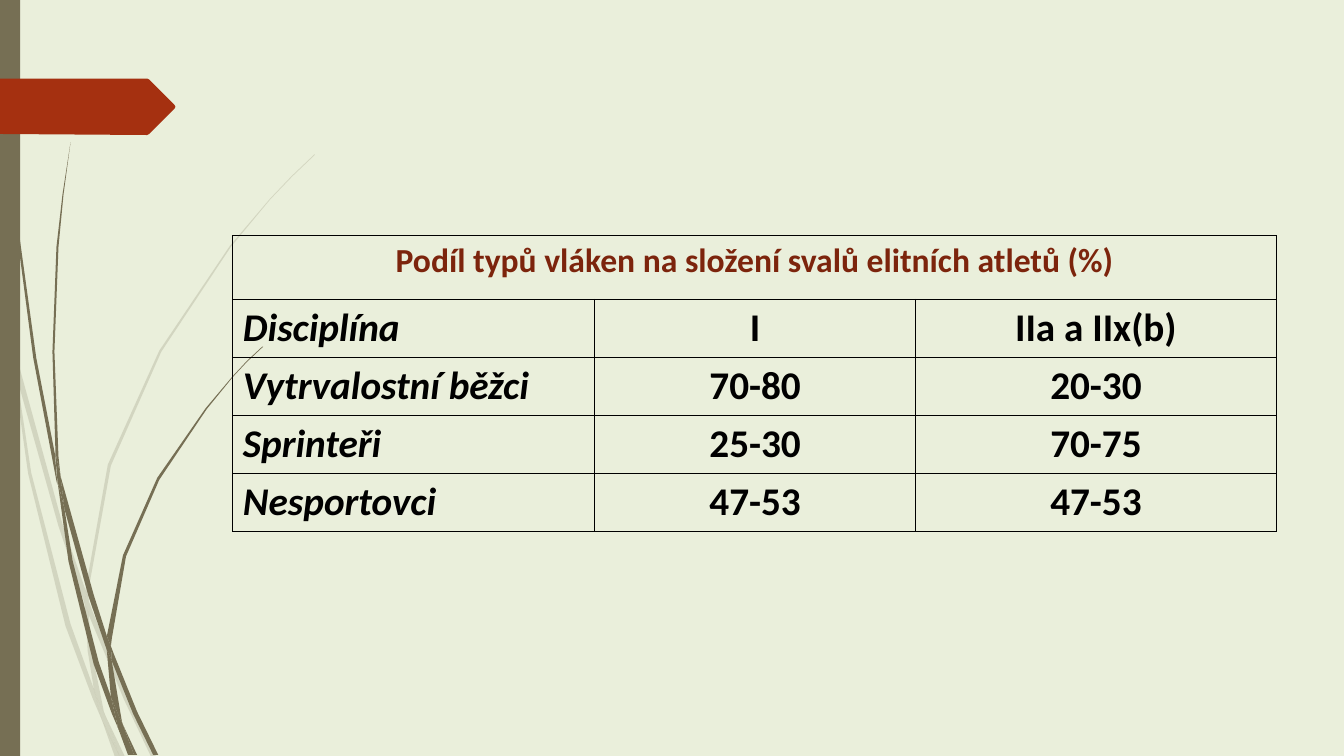
from dataclasses import dataclass

from lxml.etree import SubElement
from pptx import Presentation
from pptx.dml.color import RGBColor
from pptx.enum.shapes import MSO_SHAPE as Preset
from pptx.enum.text import PP_ALIGN as Align
from pptx.oxml.ns import qn
from pptx.shapes.base import BaseShape
from pptx.table import _Cell as Cell
from pptx.util import Emu, Pt

PX = 9144
COLORS = {
    "background": "EAEFDB",
    "stem": "766F54",
    "flag": "A53010",
    "heading": "7C240C",
    "text": "000000",
    "border": "000000",
}

Points = list[tuple[int, int]]


@dataclass(frozen=True)
class Foliage:
    opacity: int
    blades: list[Points]


@dataclass(frozen=True)
class CellStyle:
    size: int
    color: str
    align: Align
    italic: bool = False


PALE_STEMS = Foliage(20, [
    [(11, 350), (9, 322), (0, 282), (0, 299), (10, 344)],
    [(58, 522), (84, 599), (85, 586), (62, 520), (14, 345), (17, 376)],
    [(92, 607), (88, 596), (88, 610), (123, 694), (150, 751), (155, 751), (127, 692)],
    [(119, 751), (124, 751), (105, 711)],
    [(93, 683), (70, 619), (31, 469), (17, 376), (11, 350), (28, 470), (65, 621),
     (92, 693), (101, 714), (99, 707)],
    [(84, 599), (87, 646), (93, 683), (96, 692), (105, 711), (103, 706), (91, 646),
     (88, 610), (88, 608)],
    [(88, 584), (110, 462), (160, 349), (229, 245), (268, 198), (290, 175), (312, 154),
     (312, 153), (289, 175), (268, 197), (228, 244), (158, 348), (107, 461), (85, 584),
     (85, 586), (88, 596)],
    [(101, 714), (114, 751), (119, 751)],
    [(88, 608), (88, 610), (88, 596), (85, 586), (84, 599)],
    [(96, 692), (93, 683), (99, 707), (101, 714), (119, 751), (105, 711)],
])

DARK_STEMS = Foliage(100, [
    [(7, 110), (17, 233), (33, 355), (56, 477), (57, 481), (55, 457), (55, 453),
     (36, 355), (19, 232), (8, 109), (5, 48), (4, 0), (3, 0), (4, 48)],
    [(88, 592), (106, 645), (106, 633), (106, 631), (93, 590), (60, 472), (64, 505)],
    [(113, 649), (110, 641), (111, 656), (132, 708), (152, 749), (157, 749), (136, 706)],
    [(110, 691), (98, 657), (72, 556), (64, 505), (57, 477), (68, 557), (93, 659),
     (111, 708), (117, 722), (116, 717)],
    [(60, 472), (58, 453), (54, 349), (58, 245), (63, 193), (70, 141), (62, 193),
     (56, 245), (52, 349), (55, 449)],
    [(133, 749), (136, 749), (122, 719)],
    [(57, 477), (64, 505), (60, 472), (55, 449), (55, 453)],
    [(111, 633), (125, 552), (158, 476), (205, 406), (231, 374), (245, 359), (261, 344),
     (260, 344), (245, 358), (231, 373), (204, 405), (156, 474), (122, 551), (106, 631),
     (110, 641)],
    [(117, 722), (127, 749), (131, 749)],
    [(106, 645), (110, 691), (116, 706), (122, 719), (121, 716), (111, 656), (109, 651)],
    [(106, 645), (109, 651), (111, 656), (110, 641), (106, 631), (106, 633)],
    [(116, 706), (110, 691), (116, 717), (117, 722), (130, 749), (133, 749), (122, 719)],
])

FLAG: Points = [(0, 78), (146, 78), (148, 79), (173, 104), (174, 106), (173, 108),
                (148, 133), (146, 134), (0, 133)]

HEADING = "Podíl typů vláken na složení svalů elitních atletů (%)"
FIBRE_ROWS = [
    ("Disciplína", "I", "IIa a IIx(b)"),
    ("Vytrvalostní běžci", "70-80", "20-30"),
    ("Sprinteři", "25-30", "70-75"),
    ("Nesportovci", "47-53", "47-53"),
]
COLUMN_WIDTHS = [359, 318, 358]
ROW_HEIGHTS = [63] + [57] * len(FIBRE_ROWS)

HEADING_STYLE = CellStyle(24, "heading", Align.CENTER)
LABEL_STYLE = CellStyle(28, "text", Align.LEFT, italic=True)
VALUE_STYLE = CellStyle(28, "text", Align.CENTER)


def px(length: int) -> Emu:
    return Emu(length * PX)


def rgb(name: str) -> RGBColor:
    return RGBColor.from_string(COLORS[name])


def paint(shape: BaseShape, color: str, opacity: int = 100) -> None:
    shape.shadow.inherit = False
    shape.line.fill.background()
    shape.fill.solid()
    shape.fill.fore_color.rgb = rgb(color)
    if opacity < 100:
        fill_color = shape._element.spPr.find(qn("a:solidFill"))[0]
        SubElement(fill_color, qn("a:alpha"), val=str(opacity * 1000))


def draw_outline(shapes, points: Points, color: str, opacity: int = 100) -> None:
    builder = shapes.build_freeform(*points[0], scale=PX)
    builder.add_line_segments(points[1:], close=True)
    paint(builder.convert_to_shape(), color, opacity)


def draw_foliage(shapes, foliage: Foliage) -> None:
    group = shapes.add_group_shape()
    for blade in foliage.blades:
        draw_outline(group.shapes, blade, "stem", foliage.opacity)


def border_cell(cell: Cell) -> None:
    properties = cell._tc.get_or_add_tcPr()
    for side in ("L", "R", "T", "B"):
        line = SubElement(properties, qn(f"a:ln{side}"), w=str(Pt(1)))
        fill = SubElement(line, qn("a:solidFill"))
        SubElement(fill, qn("a:srgbClr"), val=COLORS["border"])
    cell.fill.background()


def write_cell(cell: Cell, text: str, style: CellStyle) -> None:
    cell.text_frame.text = text
    paragraph = cell.text_frame.paragraphs[0]
    paragraph.alignment = style.align
    properties = paragraph._p.get_or_add_pPr()
    properties.set("marL", str(px(38)))
    properties.set("indent", str(-px(38)))
    font = paragraph.runs[0].font
    font.name = "Calibri"
    font.size = Pt(style.size)
    font.bold = True
    font.italic = style.italic
    font.color.rgb = rgb(style.color)


def draw_fibre_table(shapes) -> None:
    table = shapes.add_table(
        len(ROW_HEIGHTS), len(COLUMN_WIDTHS), px(231), px(234),
        px(sum(COLUMN_WIDTHS)), px(sum(ROW_HEIGHTS)),
    ).table
    table.first_row = False
    table.horz_banding = False
    for column, width in zip(table.columns, COLUMN_WIDTHS):
        column.width = px(width)
    for row, height in zip(table.rows, ROW_HEIGHTS):
        row.height = px(height)
    for cell in table.iter_cells():
        border_cell(cell)
    table.cell(0, 0).merge(table.cell(0, len(COLUMN_WIDTHS) - 1))
    write_cell(table.cell(0, 0), HEADING, HEADING_STYLE)
    for row_index, texts in enumerate(FIBRE_ROWS, start=1):
        for column_index, text in enumerate(texts):
            style = VALUE_STYLE if column_index else LABEL_STYLE
            write_cell(table.cell(row_index, column_index), text, style)


def main() -> None:
    presentation = Presentation()
    presentation.slide_width = px(1333)
    presentation.slide_height = px(750)
    slide = presentation.slides.add_slide(presentation.slide_layouts[6])
    slide.background.fill.solid()
    slide.background.fill.fore_color.rgb = rgb("background")

    for foliage in (PALE_STEMS, DARK_STEMS):
        draw_foliage(slide.shapes, foliage)
    side_bar = slide.shapes.add_shape(Preset.RECTANGLE, 0, 0, px(20), px(750))
    paint(side_bar, "stem")
    draw_outline(slide.shapes, FLAG, "flag")
    draw_fibre_table(slide.shapes)
    presentation.save("out.pptx")


if __name__ == "__main__":
    main()
